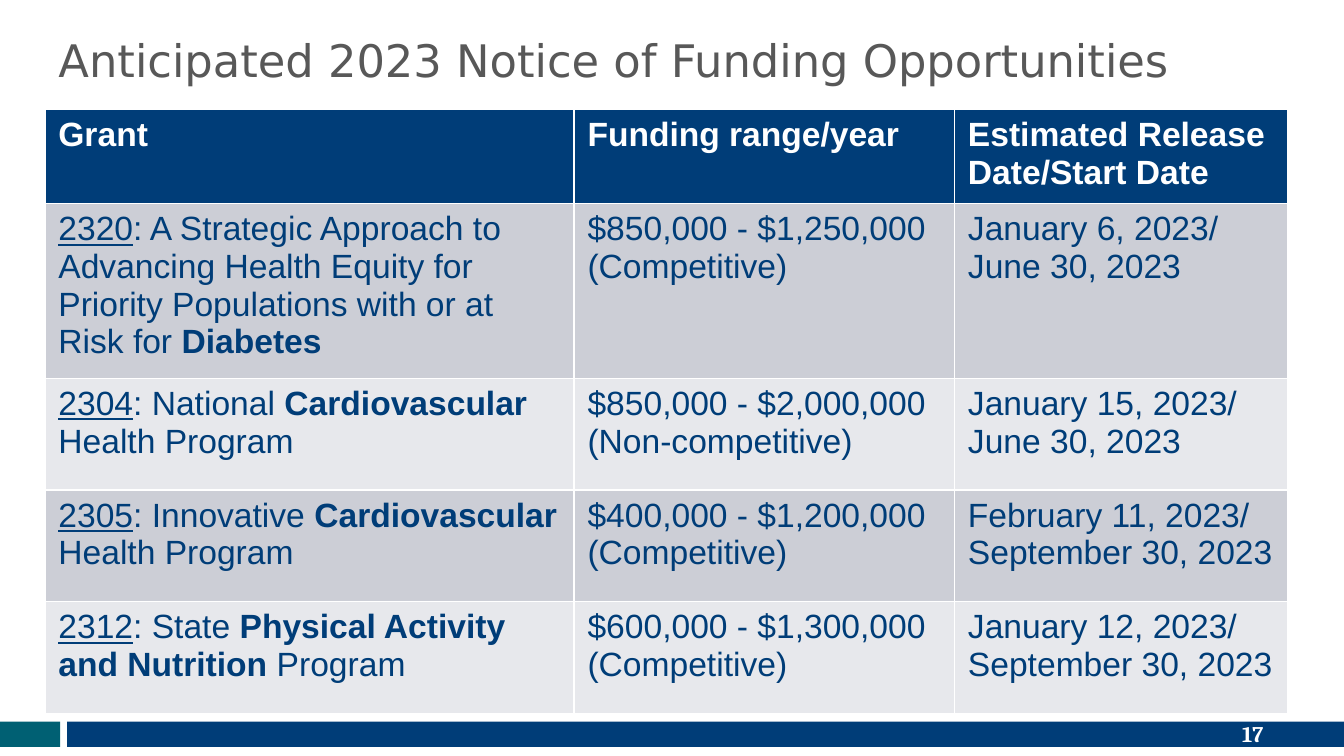
from dataclasses import dataclass

from pptx import Presentation
from pptx.dml.color import RGBColor
from pptx.enum import shapes, text
from pptx.util import Cm, Pt

COLORS = {
    "navy": "003D78",
    "teal": "006073",
    "gray": "585858",
    "white": "FFFFFF",
    "dark_band": "CCCED6",
    "light_band": "E7E8EC",
}


@dataclass
class Bar:
    left: float
    width: float
    color: str


@dataclass
class Grant:
    number: str
    lead: str
    focus: str
    tail: str
    funding: str
    dates: str


BARS = [Bar(0, 1.14, "teal"), Bar(1.27, 24.13, "navy")]
HEADINGS = ["Grant", "Funding range/year", "Estimated Release Date/Start Date"]
GRANTS = [
    Grant("2320", ": A Strategic Approach to Advancing Health Equity for "
          "Priority Populations with or at Risk for ", "Diabetes", "",
          "$850,000 - $1,250,000\n(Competitive)", "January 6, 2023/\nJune 30, 2023"),
    Grant("2304", ": National ", "Cardiovascular", " Health Program",
          "$850,000 - $2,000,000\n(Non-competitive)", "January 15, 2023/\nJune 30, 2023"),
    Grant("2305", ": Innovative ", "Cardiovascular", " Health Program",
          "$400,000 - $1,200,000 (Competitive)", "February 11, 2023/\nSeptember 30, 2023"),
    Grant("2312", ": State ", "Physical Activity and Nutrition", " Program",
          "$600,000 - $1,300,000 (Competitive)", "January 12, 2023/\nSeptember 30, 2023"),
]
COLUMN_WIDTHS = [10.0, 7.19, 6.3]
ROW_HEIGHTS = [1.78, 3.0, 2.11, 2.11, 2.11]


def rgb(color: str) -> RGBColor:
    return RGBColor.from_string(COLORS[color])


def set_font(paragraph, name: str, size: float, color: str, bold: bool | None = False) -> None:
    font = paragraph.font
    font.name, font.size, font.bold = name, Pt(size), bold
    font.color.rgb = rgb(color)


def draw_bar(slide, bar: Bar) -> None:
    strip = slide.shapes.add_shape(
        shapes.MSO_SHAPE.RECTANGLE, Cm(bar.left), Cm(13.64), Cm(bar.width), Cm(0.48))
    strip.shadow.inherit = False
    strip.fill.solid()
    strip.fill.fore_color.rgb = rgb(bar.color)
    strip.line.fill.background()


def style_cell(cell, fill: str, color: str, bold: bool) -> None:
    cell.fill.solid()
    cell.fill.fore_color.rgb = rgb(fill)
    for paragraph in cell.text_frame.paragraphs:
        set_font(paragraph, "Arial", 18, color, bold)


def write_grant_name(cell, grant: Grant) -> None:
    paragraph = cell.text_frame.paragraphs[0]
    for part in filter(None, (grant.number, grant.lead, grant.focus, grant.tail)):
        run = paragraph.add_run()
        run.text = part
        run.font.underline = part == grant.number
        run.font.bold = part == grant.focus


def draw_grants(slide) -> None:
    table = slide.shapes.add_table(
        len(ROW_HEIGHTS), len(COLUMN_WIDTHS), Cm(0.85), Cm(2.07),
        Cm(sum(COLUMN_WIDTHS)), Cm(sum(ROW_HEIGHTS))).table
    for column, width in zip(table.columns, COLUMN_WIDTHS):
        column.width = Cm(width)
    for row, height in zip(table.rows, ROW_HEIGHTS):
        row.height = Cm(height)
    for column, heading in enumerate(HEADINGS):
        cell = table.cell(0, column)
        cell.text = heading
        style_cell(cell, "navy", "white", True)
    for row, grant in enumerate(GRANTS, start=1):
        name, funding, dates = table.rows[row].cells
        write_grant_name(name, grant)
        funding.text = grant.funding
        dates.text = grant.dates
        for cell in (name, funding, dates):
            style_cell(cell, "dark_band" if row % 2 else "light_band", "navy", False)


def write_title(slide) -> None:
    title = slide.shapes.title
    title.left, title.top, title.width, title.height = Cm(0.85), Cm(0.28), Cm(24.55), Cm(1.68)
    title.text = "Anticipated 2023 Notice of Funding Opportunities"
    frame = title.text_frame
    frame.vertical_anchor = text.MSO_ANCHOR.MIDDLE
    frame.auto_size = text.MSO_AUTO_SIZE.NONE
    heading = frame.paragraphs[0]
    heading.alignment = text.PP_ALIGN.LEFT
    set_font(heading, "DejaVu Sans", 24, "gray")


def write_page_number(slide) -> None:
    frame = slide.shapes.add_textbox(Cm(18.21), Cm(13.49), Cm(5.92), Cm(0.76)).text_frame
    frame.word_wrap = True
    frame.vertical_anchor = text.MSO_ANCHOR.MIDDLE
    page = frame.paragraphs[0]
    page.text = "17"
    page.alignment = text.PP_ALIGN.RIGHT
    set_font(page, "Cambria", 12, "white", True)


def main() -> None:
    deck = Presentation()
    deck.slide_width, deck.slide_height = Cm(25.4), Cm(14.29)
    slide = deck.slides.add_slide(deck.slide_layouts[5])
    for bar in BARS:
        draw_bar(slide, bar)
    write_page_number(slide)
    write_title(slide)
    draw_grants(slide)
    deck.save("out.pptx")


if __name__ == "__main__":
    main()
